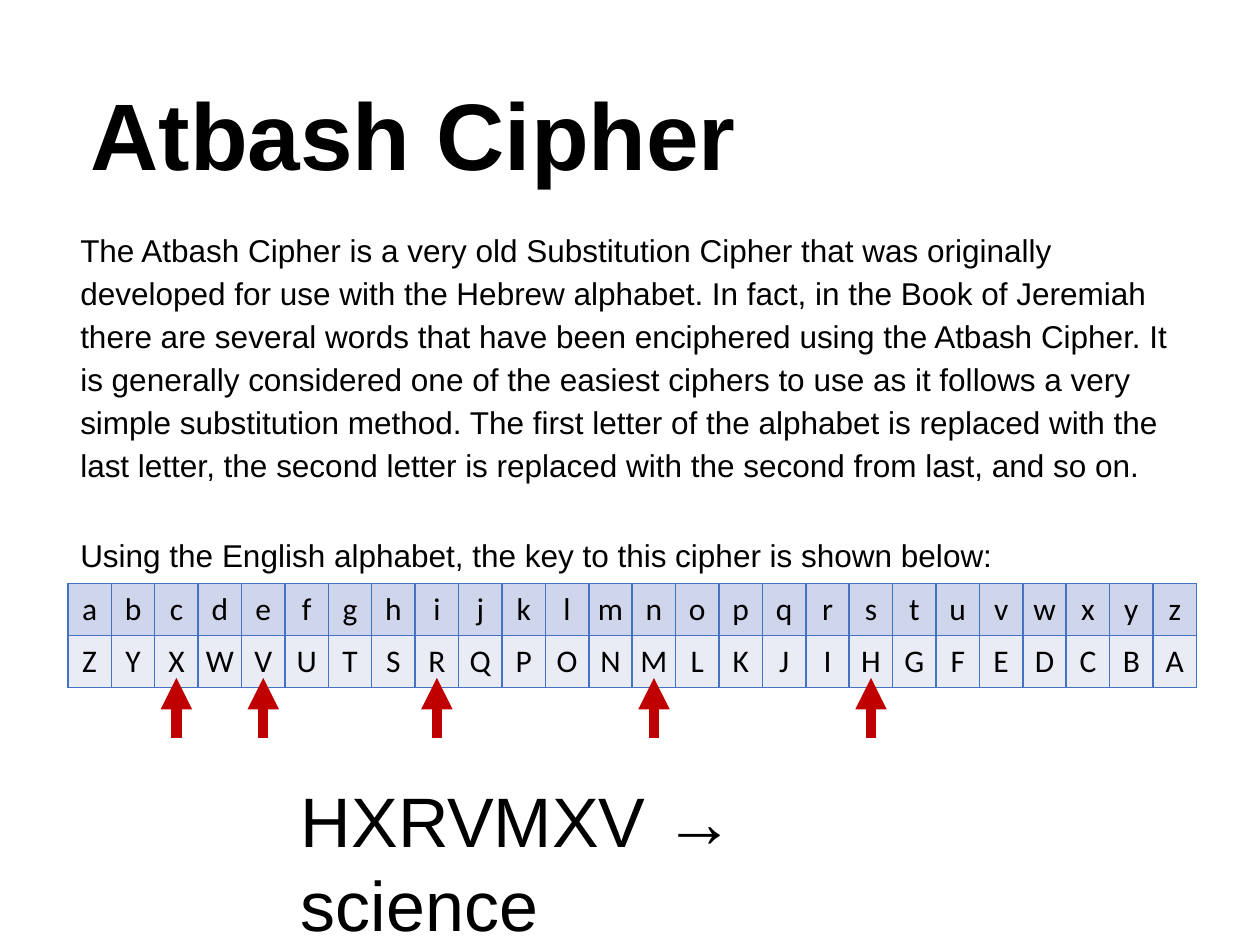
"""Build the Atbash Cipher slide with its key table and decoded example."""
from lxml.etree import SubElement
from pptx import Presentation
from pptx.dml.color import RGBColor
from pptx.enum.shapes import MSO_CONNECTOR as Connector
from pptx.enum.text import MSO_ANCHOR as Anchor, PP_ALIGN as Align
from pptx.oxml.ns import qn
from pptx.util import Pt


def color(value):
    return RGBColor.from_string(value)


def write(paragraph, text, name, size, bold=False):
    run = paragraph.add_run()
    run.text = text
    run.font.color.rgb = color("000000")
    for key, value in {"name": name, "size": Pt(size), "bold": bold}.items():
        setattr(run.font, key, value)


presentation = Presentation()
presentation.slide_width, presentation.slide_height = Pt(720), Pt(540)
slide = presentation.slides.add_slide(presentation.slide_layouts[6])

description = (
    "The Atbash Cipher is a very old Substitution Cipher that was originally developed "
    "for use with the Hebrew alphabet. In fact, in the Book of Jeremiah there are several "
    "words that have been enciphered using the Atbash Cipher. It is generally considered "
    "one of the easiest ciphers to use as it follows a very simple substitution method. "
    "The first letter of the alphabet is replaced with the last letter, the second letter "
    "is replaced with the second from last, and so on."
)
key_caption = "Using the English alphabet, the key to this cipher is shown below:"
plain_word = "science"
table_left, table_top, table_width, row_height = 38.8, 333.4, 645, 29.8

texts = [
    ("Atbash Cipher", (44.6, 47, 633.6, 53.3), 54, True, {"line_spacing": 0.9}),
    (description, (table_left, 125.3, table_width, 156.2), 18, False, {"line_spacing": 1.14}),
    (key_caption, (table_left, 299.5, table_width, 32.4), 18, False, {"line_spacing": 1.14}),
    (f"HXRVMXV → {plain_word}", (164.9, 440.6, 392.4, 55.4), 40, False, {}),
]
for text, box, size, bold, paragraph_format in texts:
    frame = slide.shapes.add_textbox(*map(Pt, box)).text_frame
    frame.word_wrap = True
    paragraph = frame.paragraphs[0]
    for key, value in paragraph_format.items():
        setattr(paragraph, key, value)
    write(paragraph, text, "Arial", size, bold)

alphabet = "abcdefghijklmnopqrstuvwxyz"
key_rows = [(alphabet, "CFD5EA"), (alphabet[::-1].upper(), "E9EBF5")]
column_width = table_width / len(alphabet)
table = slide.shapes.add_table(
    len(key_rows), len(alphabet), Pt(table_left), Pt(table_top),
    Pt(table_width), Pt(row_height * len(key_rows)),
).table
for column in table.columns:
    column.width = Pt(column_width)
cell_format = {"vertical_anchor": Anchor.MIDDLE, "margin_left": 0, "margin_right": 0,
               "margin_top": 0, "margin_bottom": 0}
for row, (letters, fill) in enumerate(key_rows):
    table.rows[row].height = Pt(row_height)
    for column, letter in enumerate(letters):
        cell = table.cell(row, column)
        for key, value in cell_format.items():
            setattr(cell, key, value)
        paragraph = cell.text_frame.paragraphs[0]
        paragraph.alignment = Align.CENTER
        write(paragraph, letter, "Calibri", 18)
        properties = cell._tc.get_or_add_tcPr()
        for side in ("a:lnL", "a:lnR", "a:lnT", "a:lnB"):
            border = SubElement(properties, qn(side), w=str(Pt(1)))
            border_fill = SubElement(border, qn("a:solidFill"))
            SubElement(border_fill, qn("a:srgbClr"), val="4472C4")
        cell.fill.solid()
        cell.fill.fore_color.rgb = color(fill)

for letter in sorted(set(plain_word)):
    x = Pt(table_left + column_width * (alphabet.index(letter) + 0.5))
    arrow = slide.shapes.add_connector(Connector.STRAIGHT, x, Pt(422), x, Pt(387.4))
    arrow.line.color.rgb = color("C00000")
    arrow.line.width = Pt(6)
    SubElement(arrow.line._get_or_add_ln(), qn("a:tailEnd"), type="triangle")
    SubElement(arrow._element.spPr, qn("a:effectLst"))

presentation.save("out.pptx")
